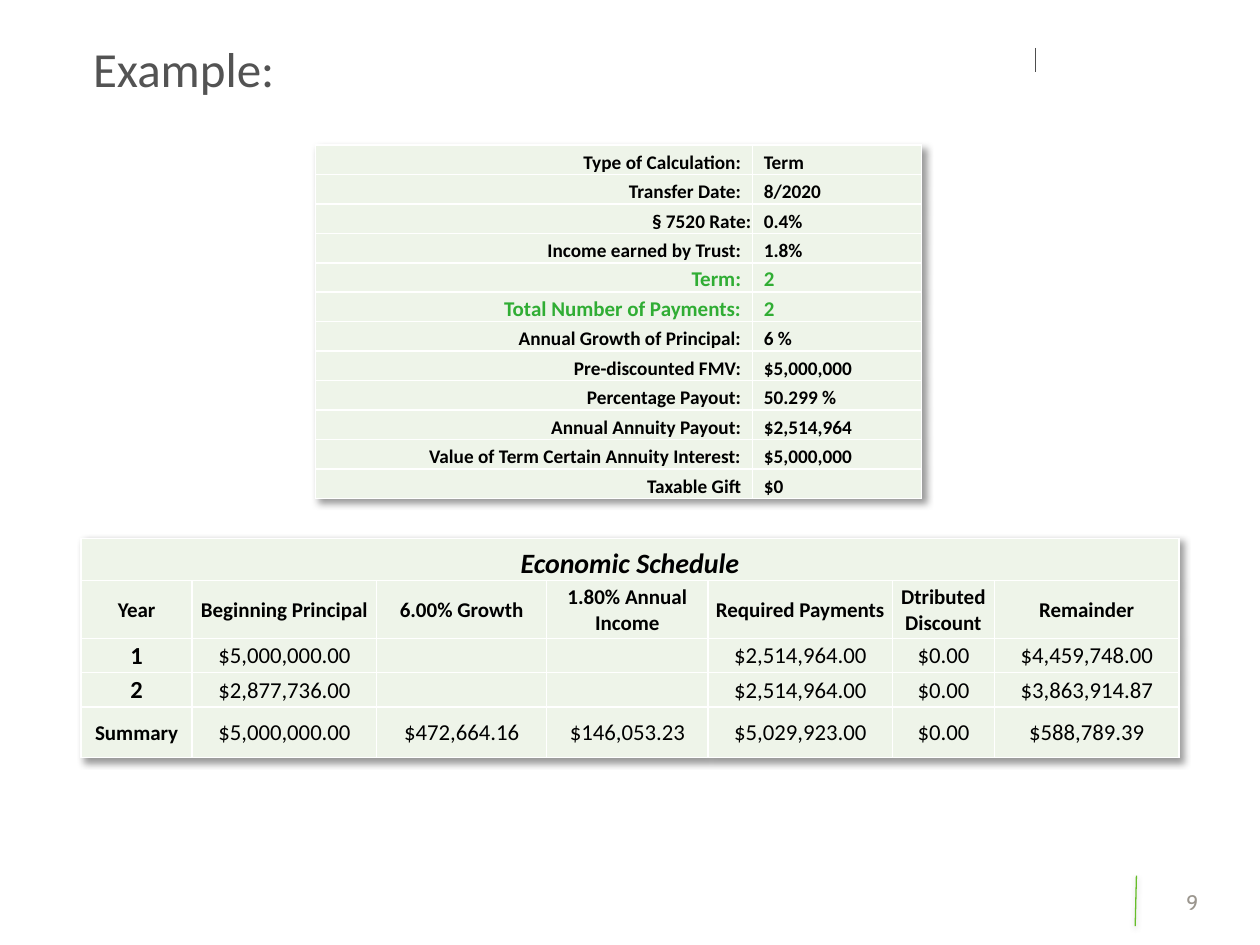
from lxml.etree import SubElement
from pptx import Presentation
from pptx.dml.color import RGBColor
from pptx.enum.shapes import MSO_CONNECTOR
from pptx.enum.text import MSO_ANCHOR, PP_ALIGN
from pptx.oxml.ns import qn
from pptx.util import Pt

COLORS = {
    "title": "535353",
    "tick": "4E4E4E",
    "green_line": "66BD29",
    "shadow": "808080",
    "cell": "EEF4E9",
    "border": "FFFFFF",
    "text": "000000",
    "highlight": "30AD34",
    "number": "9B968E",
}

TERMS = [
    ("Type of Calculation:", "Term"),
    ("Transfer Date:", "8/2020"),
    ("§ 7520 Rate:", "0.4%"),
    ("Income earned by Trust:", "1.8%"),
    ("Term:", "2"),
    ("Total Number of Payments:", "2"),
    ("Annual Growth of Principal:", "6 %"),
    ("Pre-discounted FMV:", "$5,000,000"),
    ("Percentage Payout:", "50.299 %"),
    ("Annual Annuity Payout:", "$2,514,964"),
    ("Value of Term Certain Annuity Interest:", "$5,000,000"),
    ("Taxable Gift", "$0"),
]
HIGHLIGHTED = ("Term:", "Total Number of Payments:")
UNINDENTED = "§ 7520 Rate:"

SCHEDULE = [
    ("Economic Schedule", "", "", "", "", "", ""),
    ("Year", "Beginning Principal", "6.00% Growth", "1.80% Annual Income",
     "Required Payments", "Dtributed Discount", "Remainder"),
    ("1", "$5,000,000.00", "", "", "$2,514,964.00", "$0.00", "$4,459,748.00"),
    ("2", "$2,877,736.00", "", "", "$2,514,964.00", "$0.00", "$3,863,914.87"),
    ("Summary", "$5,000,000.00", "$472,664.16", "$146,053.23",
     "$5,029,923.00", "$0.00", "$588,789.39"),
]


def rgb(name):
    return RGBColor.from_string(COLORS[name])


def style_font(para, size, color, name="Calibri", bold=False, italic=False):
    font = para.font
    font.name, font.size, font.bold, font.italic = name, Pt(size), bold, italic
    font.color.rgb = rgb(color)


def add_shadow(effects, blur, distance, angle, alpha, color):
    shadow = SubElement(effects, qn("a:outerShdw"), blurRad=str(Pt(blur)),
                        dist=str(Pt(distance)), dir=str(angle * 60000),
                        algn="tl", rotWithShape="0")
    tint = SubElement(shadow, qn("a:srgbClr"), val=COLORS[color])
    SubElement(tint, qn("a:alpha"), val=str(alpha * 1000))


def add_line(page, start, end, color):
    points = [Pt(value) for value in (*start, *end)]
    line = page.shapes.add_connector(MSO_CONNECTOR.STRAIGHT, *points)
    line.line.color.rgb = rgb(color)
    line.line.width = Pt(0.75)
    return SubElement(line._element.spPr, qn("a:effectLst"))


def add_grid(page, left, top, widths, heights):
    frame = page.shapes.add_table(len(heights), len(widths), Pt(left), Pt(top),
                                  Pt(sum(widths)), Pt(sum(heights)))
    table = frame.table
    table.first_row = table.horz_banding = False
    for column, width in zip(table.columns, widths):
        column.width = Pt(width)
    for row, height in zip(table.rows, heights):
        row.height = Pt(height)
    properties = table._tbl.tblPr
    effects = SubElement(properties, qn("a:effectLst"))
    properties.insert(0, effects)
    add_shadow(effects, 4, 3, 45, 40, "text")
    return table


def fill_cell(cell, text, size, align, anchor, left=0.72, right=0.72,
              color="text", bold=True, italic=False):
    cell.margin_left, cell.margin_right = Pt(left), Pt(right)
    cell.margin_top, cell.margin_bottom = Pt(0.72), Pt(0)
    cell.vertical_anchor = anchor
    for side in ("lnL", "lnR", "lnT", "lnB"):
        border = SubElement(cell._tc.tcPr, qn(f"a:{side}"), w=str(Pt(1)))
        paint = SubElement(border, qn("a:solidFill"))
        SubElement(paint, qn("a:srgbClr"), val=COLORS["border"])
    cell.fill.solid()
    cell.fill.fore_color.rgb = rgb("cell")
    para = cell.text_frame.paragraphs[0]
    para.alignment = align
    if text:
        para.text = text
    style_font(para, size, color, bold=bold, italic=italic)
    if not text:
        SubElement(para._p, qn("a:endParaRPr"), sz=str(size * 100))


def add_title(page, left, top, width, height):
    title = page.shapes.title
    title.left, title.top = Pt(left), Pt(top)
    title.width, title.height = Pt(width), Pt(height)
    title.text_frame.vertical_anchor = MSO_ANCHOR.TOP
    para = title.text_frame.paragraphs[0]
    para.text = "Example:"
    para.alignment = PP_ALIGN.LEFT
    para.line_spacing = 0.9
    style_font(para, 28, "title")


def add_terms(page, left, top, width, height):
    value_width = 96.5
    table = add_grid(page, left, top, [width - value_width, value_width],
                     [height / len(TERMS)] * len(TERMS))
    for row, (label, value) in enumerate(TERMS):
        size, color = (12, "highlight") if label in HIGHLIGHTED else (11, "text")
        indent = 0.72 if label == UNINDENTED else 6.5
        fill_cell(table.cell(row, 0), label, size, PP_ALIGN.RIGHT,
                  MSO_ANCHOR.BOTTOM, right=indent, color=color)
        fill_cell(table.cell(row, 1), value, size, PP_ALIGN.LEFT,
                  MSO_ANCHOR.BOTTOM, left=6.5, color=color)


def add_schedule(page, left, top):
    table = add_grid(page, left, top, [63.4, 105.4, 97.2, 92.2, 105.4, 58.3, 105.4],
                     [24.2, 33, 19.6, 19.6, 29])
    for row, texts in enumerate(SCHEDULE):
        for column, text in enumerate(texts):
            heading = row < 2 or column == 0
            size = 16 if row == 0 else 14 if text in ("1", "2") else 12 if heading else 13
            anchor = MSO_ANCHOR.BOTTOM if row == 0 else MSO_ANCHOR.MIDDLE
            fill_cell(table.cell(row, column), text, size, PP_ALIGN.CENTER,
                      anchor, bold=heading, italic=row == 0)
    table.cell(0, 0).merge(table.cell(0, len(SCHEDULE[0]) - 1))


def add_page_number(page, left, top, width, height):
    box = page.shapes.add_textbox(Pt(left), Pt(top), Pt(width), Pt(height))
    frame = box.text_frame
    frame.word_wrap = False
    frame.margin_left = frame.margin_right = Pt(3.6)
    para = frame.paragraphs[0]
    para.text = "9"
    para.alignment = PP_ALIGN.CENTER
    style_font(para, 12, "number", name="Cabin")


def main():
    deck = Presentation()
    deck.slide_width, deck.slide_height = Pt(720), Pt(540)
    page = deck.slides.add_slide(deck.slide_layouts[5])
    add_line(page, (591.8, 27.4), (591.8, 41), "tick")
    effects = add_line(page, (649.4, 500.4), (648.7, 529.2), "green_line")
    add_shadow(effects, 3, 1.6, 90, 38, "shadow")
    add_title(page, 46, 22.3, 656.6, 59.8)
    add_schedule(page, 46.4, 307.6)
    add_terms(page, 180.2, 82.8, 346.3, 202.3)
    add_page_number(page, 658, 504.7, 46.8, 28.8)
    deck.save("out.pptx")


if __name__ == "__main__":
    main()
